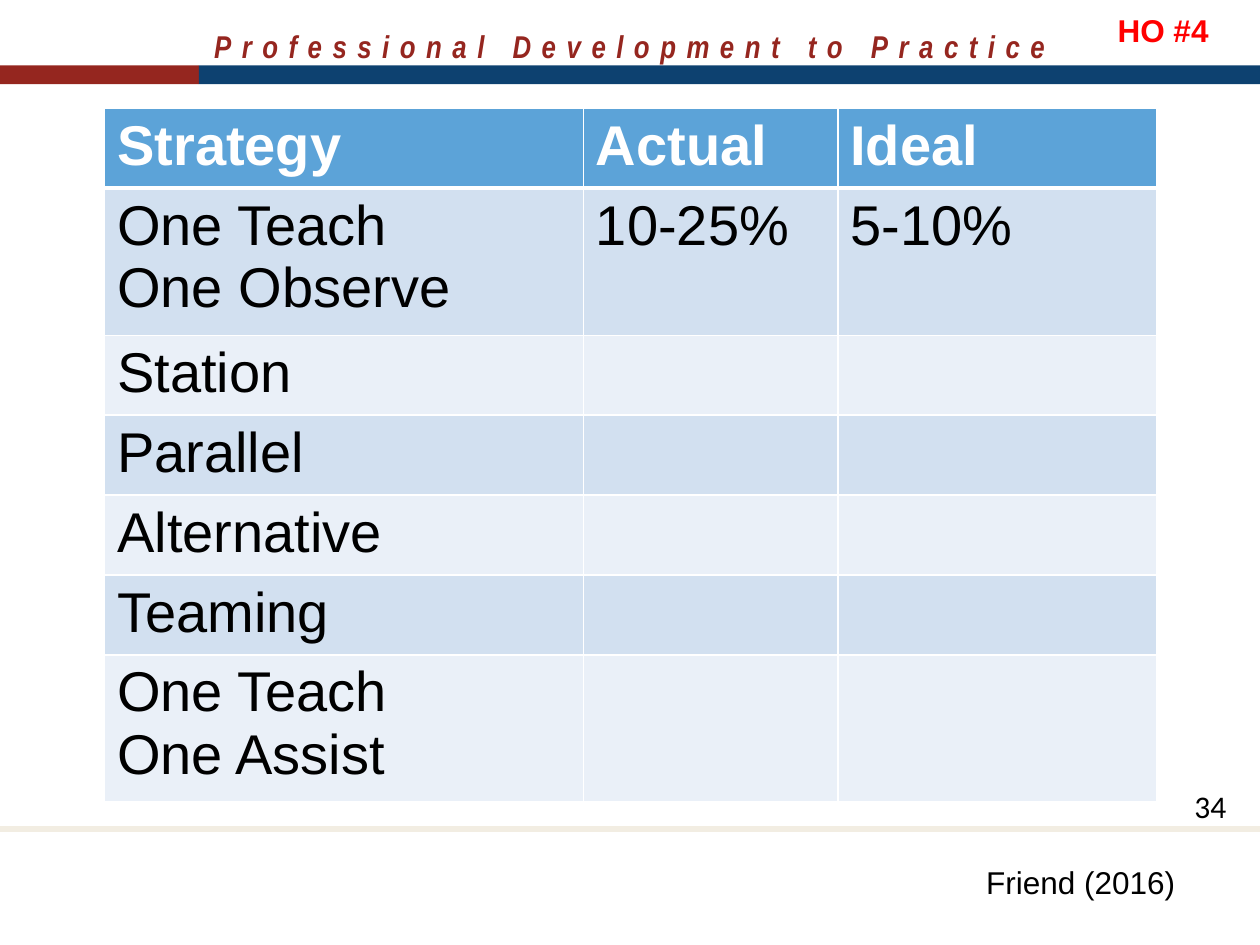
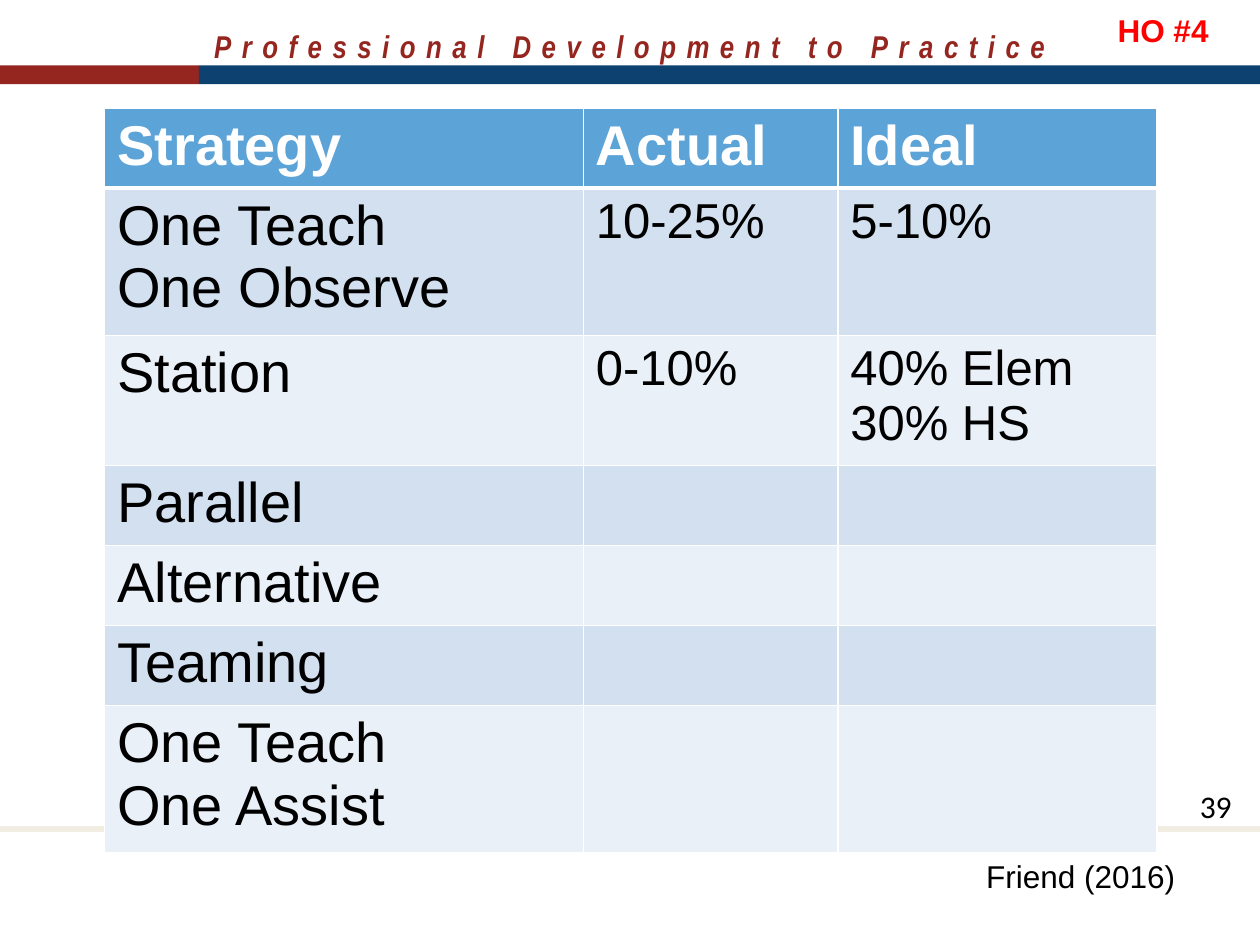
"""Builds two handout slides that compare actual and ideal use of co-teaching strategies."""
from lxml.etree import SubElement as Sub
from pptx import Presentation
from pptx.dml.color import RGBColor as RGB
from pptx.enum.shapes import MSO_CONNECTOR as Line, MSO_SHAPE as Shape
from pptx.enum.text import MSO_ANCHOR as Anchor, MSO_AUTO_SIZE as Auto, PP_ALIGN as Align
from pptx.oxml.ns import qn
from pptx.util import Cm, Pt

HEAD = ["Strategy", "Actual", "Ideal"]
NAMES = ["One Teach\nOne Observe", "Station", "Parallel", "Alternative", "Teaming",
         "One Teach\nOne Assist"]
SLIDES = [
    {"page": "34", "left": 23.77, "cite": 17.27, "wide": 4.7, "size": 32,
     "data": {0: ("10-25%", "5-10%")}},
    {"page": "39", "left": 23.88, "cite": 17.15, "wide": 4.9, "size": 28,
     "data": {0: ("10-25%", "5-10%"), 1: ("0-10%", "40% Elem\n30% HS")}},
]
BRAND = "Professional Development to Practice"
CITE = "Friend (2016)"
TAG = "HO #4"

RED, NAVY, SAND = RGB(0x95, 0x26, 0x1F), RGB(0x0D, 0x41, 0x70), RGB(0xF2, 0xED, 0xE2)
BLUE, MID, PALE = RGB(0x5C, 0xA3, 0xD8), RGB(0xD2, 0xE0, 0xF0), RGB(0xEA, 0xF0, 0xF8)
WHITE, BLACK, ALERT = RGB(255, 255, 255), RGB(0, 0, 0), RGB(255, 0, 0)

WIDTH, HEIGHT = 25.4, 19.05
COLS = [9.65, 5.13, 6.43]
ROW, TALL = 1.6, 2.97
SPLIT = 4.01
RULE = 16.71


def style(para, size, color=BLACK, face="Arial", bold=False, slant=False):
    font = para.font
    font.name, font.size, font.bold, font.italic = face, Pt(size), bold, slant
    font.color.rgb = color


def add_text(slide, text, left, top, width, wrap=True, **look):
    frame = slide.shapes.add_textbox(Cm(left), Cm(top), Cm(width), Cm(1.02)).text_frame
    frame.word_wrap, frame.auto_size = wrap, Auto.SHAPE_TO_FIT_TEXT
    para = frame.paragraphs[0]
    para.text = text
    style(para, 18, **look)
    return para


def add_box(slide, kind, left, top, width, height, color=None):
    box = slide.shapes.add_shape(kind, Cm(left), Cm(top), Cm(width), Cm(height))
    box.shadow.inherit = False
    box.line.fill.background()
    if color is None:
        box.fill.background()
    else:
        box.fill.solid()
        box.fill.fore_color.rgb = color
    return box


def add_frame(slide):
    para = add_text(slide, BRAND, 0, 0.43, WIDTH, color=RED, face="Arial Narrow",
                    bold=True, slant=True)
    para.alignment = Align.CENTER
    para.runs[0].font._element.set("spc", "600")
    for left, width, color in ((0, SPLIT, RED), (SPLIT, WIDTH - SPLIT, NAVY)):
        add_box(slide, Shape.RECTANGLE, left, 1.32, width, 0.38, color)
    rule = slide.shapes.add_connector(Line.STRAIGHT, 0, Cm(RULE), Cm(WIDTH), Cm(RULE))
    rule.line.color.rgb, rule.line.width = SAND, Pt(3)
    Sub(rule._element.spPr, qn("a:effectLst"))


def add_page(slide, text, left):
    box = add_box(slide, Shape.DOUBLE_BRACKET, left, 15.7, 1.52, 1.09)
    box.adjustments[0] = 0.18
    frame = box.text_frame
    frame.vertical_anchor = Anchor.MIDDLE
    para = frame.paragraphs[0]
    para.text, para.alignment = text, Align.LEFT
    style(para, 18, face="Calibri")


def add_edges(cell, top, bottom):
    props = cell._tc.get_or_add_tcPr()
    for side, width in (("L", 1), ("R", 1), ("T", top), ("B", bottom)):
        edge = Sub(props, qn("a:ln" + side), w=str(Pt(width)))
        Sub(Sub(edge, qn("a:solidFill")), qn("a:srgbClr"), val=str(WHITE))


def add_grid(slide, data, size):
    rows = [HEAD] + [[name, *data.get(i, ("", ""))] for i, name in enumerate(NAMES)]
    highs = [TALL if "\n" in row[0] else ROW for row in rows]
    grid = slide.shapes.add_table(len(rows), len(COLS), Cm(2.11), Cm(2.18),
                                  Cm(sum(COLS)), Cm(sum(highs))).table
    for col, width in zip(grid.columns, COLS):
        col.width = Cm(width)
    for r, (row, high) in enumerate(zip(rows, highs)):
        grid.rows[r].height = Cm(high)
        for c, text in enumerate(row):
            cell = grid.cell(r, c)
            add_edges(cell, 3 if r == 1 else 1, 3 if r == 0 else 1)
            cell.fill.solid()
            cell.fill.fore_color.rgb = BLUE if r == 0 else MID if r % 2 else PALE
            if text:
                cell.text_frame.text = text
                for para in cell.text_frame.paragraphs:
                    style(para, size if r and c else 32, BLACK if r else WHITE, bold=r == 0)


def main():
    deck = Presentation()
    deck.slide_width, deck.slide_height = Cm(WIDTH), Cm(HEIGHT)
    for item in SLIDES:
        slide = deck.slides.add_slide(deck.slide_layouts[6])
        add_frame(slide)
        add_page(slide, item["page"], item["left"])
        add_grid(slide, item["data"], item["size"])
        add_text(slide, CITE, 19.63, item["cite"], item["wide"])
        add_text(slide, TAG, 22.28, 0.1, 2.36, wrap=False, color=ALERT, bold=True)
    deck.save("out.pptx")


if __name__ == "__main__":
    main()
